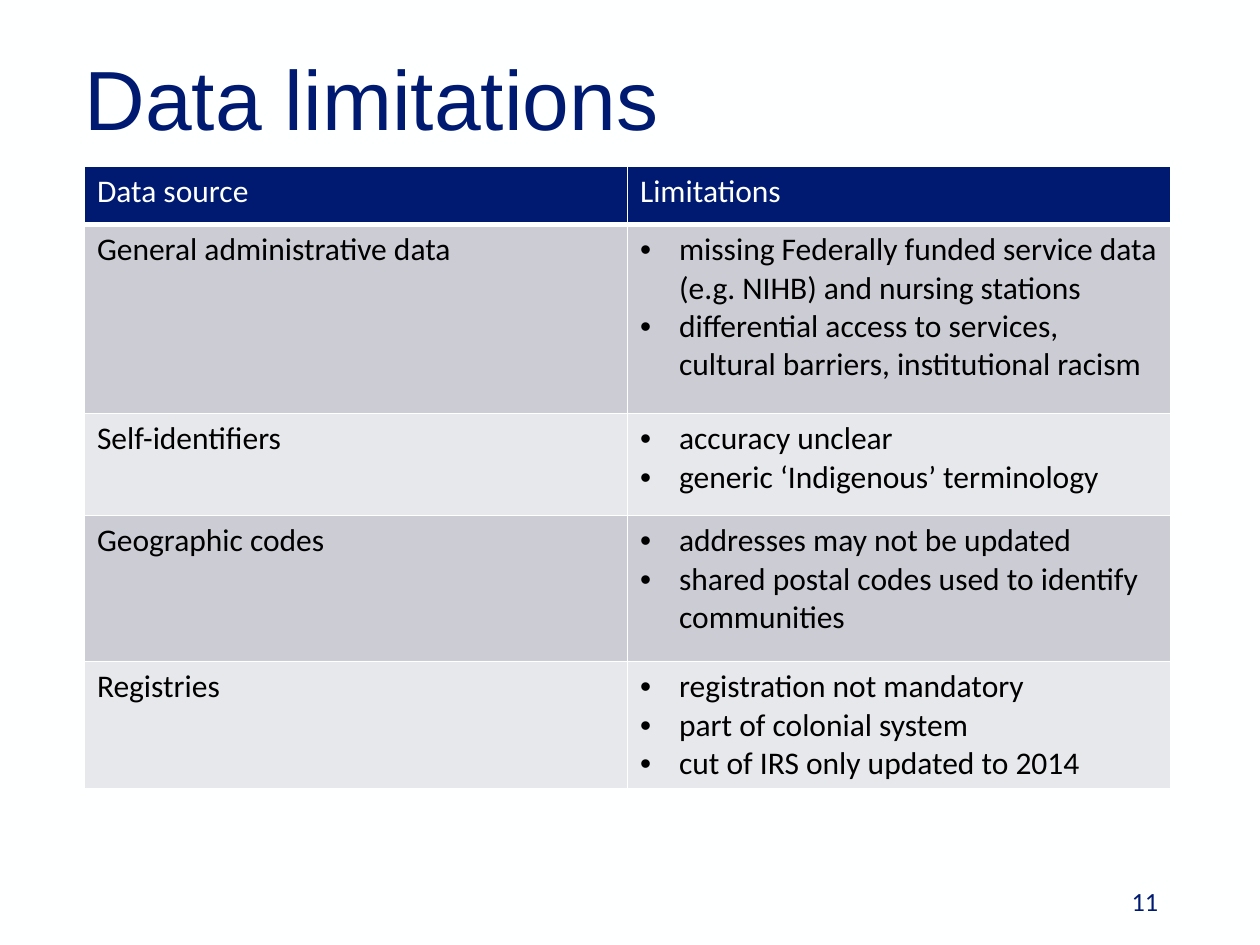
from dataclasses import dataclass

from lxml import etree
from pptx import Presentation
from pptx.dml.color import RGBColor
from pptx.enum.text import MSO_ANCHOR, PP_ALIGN
from pptx.oxml.ns import qn
from pptx.util import Emu, Pt

PX = 9144  # 100 px to the inch
BOTTOM, TOP = MSO_ANCHOR.BOTTOM, MSO_ANCHOR.TOP
LEFT, RIGHT = PP_ALIGN.LEFT, PP_ALIGN.RIGHT
COLORS = {
    "paper": "FEFFFF",
    "title": "001A72",
    "navy": "001971",
    "text": "000000",
    "dark_band": "CCCCD5",
    "light_band": "E7E8EB",
}
MARGIN, CONTENT_W = 67, 862
BULLET_INDENT = 31


@dataclass
class Label:
    text: str
    box: tuple[int, int, int, int]
    font: str
    size: int
    color: str
    align: PP_ALIGN = LEFT
    anchor: MSO_ANCHOR = TOP
    inset: tuple[int, int] = (10, 5)
    line_spacing: float = 1.0


@dataclass
class Source:
    name: str
    limitations: list[str]
    height: int


LABELS = [
    Label("Data limitations", (MARGIN, 22, CONTENT_W, 96), "Arial", 48, "title",
          anchor=BOTTOM, inset=(0, 0), line_spacing=0.9),
    Label("11", (704, 698, 225, 40), "Calibri", 15, "navy", align=RIGHT),
]
HEADERS = ["Data source", "Limitations"]
HEADER_H = 46
SOURCES = [
    Source("General administrative data", [
        "missing Federally funded service data (e.g. NIHB) and nursing stations",
        "differential access to services, cultural barriers, institutional racism",
    ], 150),
    Source("Self-identifiers", [
        "accuracy unclear",
        "generic ‘Indigenous’ terminology",
    ], 81),
    Source("Geographic codes", [
        "addresses may not be updated",
        "shared postal codes used to identify communities",
    ], 116),
    Source("Registries", [
        "registration not mandatory",
        "part of colonial system",
        "cut of IRS only updated to 2014",
    ], 101),
]


def px(n: int) -> Emu:
    return Emu(n * PX)


def rgb(name: str) -> RGBColor:
    return RGBColor.from_string(COLORS[name])


def style_run(r, font: str, size: int, color: str) -> None:
    r.font.name = font
    r.font.size = Pt(size)
    r.font.color.rgb = rgb(color)


def add_label(slide, label: Label) -> None:
    tf = slide.shapes.add_textbox(*map(px, label.box)).text_frame
    tf.word_wrap = True
    tf.vertical_anchor = label.anchor
    tf.margin_left = tf.margin_right = px(label.inset[0])
    tf.margin_top = tf.margin_bottom = px(label.inset[1])
    tf.text = label.text
    p = tf.paragraphs[0]
    p.alignment = label.align
    p.line_spacing = label.line_spacing
    style_run(p.runs[0], label.font, label.size, label.color)


def add_bullet(p) -> None:
    pPr = p._p.get_or_add_pPr()
    pPr.set("marL", str(px(BULLET_INDENT)))
    pPr.set("indent", str(-px(BULLET_INDENT)))
    etree.SubElement(pPr, qn("a:buFont")).set("typeface", "Arial")
    etree.SubElement(pPr, qn("a:buChar")).set("char", "•")


def add_borders(cell, bottom: int) -> None:
    """Line all four sides at 1 pt, except the bottom at its own width."""
    tcPr = cell._tc.get_or_add_tcPr()
    for side, width in (("L", 1), ("R", 1), ("T", 1), ("B", bottom)):
        ln = etree.SubElement(tcPr, qn(f"a:ln{side}"), w=str(Pt(width)))
        fill = etree.SubElement(ln, qn("a:solidFill"))
        etree.SubElement(fill, qn("a:srgbClr"), val=COLORS["paper"])


def fill_cell(cell, lines: list[str], color: str, fill: str,
              bulleted: bool = False, bottom: int = 1) -> None:
    add_borders(cell, bottom)
    cell.fill.solid()
    cell.fill.fore_color.rgb = rgb(fill)
    cell.text_frame.text = "\n".join(lines)
    for p in cell.text_frame.paragraphs:
        if bulleted:
            add_bullet(p)
        style_run(p.runs[0], "Calibri", 18, color)


def add_source_table(slide) -> None:
    heights = [HEADER_H] + [source.height for source in SOURCES]
    table = slide.shapes.add_table(
        len(heights), len(HEADERS),
        px(MARGIN), px(132), px(CONTENT_W), px(sum(heights))).table
    for row, height in zip(table.rows, heights):
        row.height = px(height)
    for col, header in enumerate(HEADERS):
        table.columns[col].width = px(CONTENT_W // len(HEADERS))
        fill_cell(table.cell(0, col), [header], "paper", "navy", bottom=3)
    for i, source in enumerate(SOURCES, start=1):
        band = "dark_band" if i % 2 else "light_band"
        fill_cell(table.cell(i, 0), [source.name], "text", band)
        fill_cell(table.cell(i, 1), source.limitations, "text", band, bulleted=True)


def main() -> None:
    prs = Presentation()
    prs.slide_width, prs.slide_height = px(1000), px(750)
    slide = prs.slides.add_slide(prs.slide_layouts[6])
    slide.background.fill.solid()
    slide.background.fill.fore_color.rgb = rgb("paper")
    for label in LABELS:
        add_label(slide, label)
    add_source_table(slide)
    prs.save("out.pptx")


if __name__ == "__main__":
    main()
